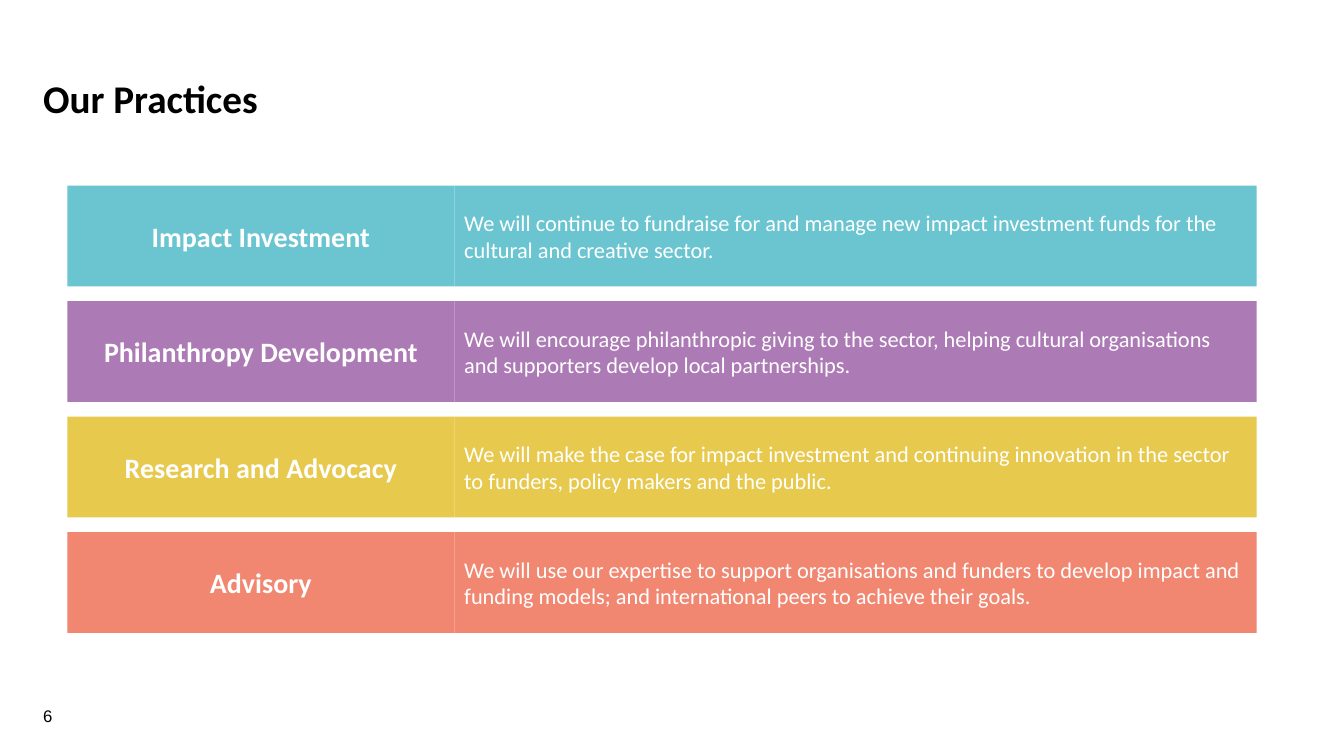
"""Build the "Our Practices" slide with four coloured practice bands."""
from dataclasses import dataclass

from pptx import Presentation
from pptx.dml.color import RGBColor
from pptx.enum.shapes import MSO_SHAPE
from pptx.enum.text import MSO_ANCHOR, PP_ALIGN
from pptx.shapes.autoshape import Shape
from pptx.slide import Slide
from pptx.util import Cm, Pt

RECTANGLE = MSO_SHAPE.RECTANGLE
MIDDLE = MSO_ANCHOR.MIDDLE
TOP = MSO_ANCHOR.TOP
LEFT = PP_ALIGN.LEFT
CENTER = PP_ALIGN.CENTER

BLACK = "000000"
WHITE = "FFFFFF"
MARGIN = 0.84
BAND_LEFT = 1.7
BAND_TOP = 4.68
BAND_HEIGHT = 2.54
BAND_PITCH = 2.91
NAME_WIDTH = 9.75
AIM_WIDTH = 20.22


@dataclass(frozen=True)
class Box:
    """Position and size in centimetres."""
    left: float
    top: float
    width: float
    height: float


@dataclass(frozen=True)
class Style:
    """Look of one piece of text."""
    size: int
    color: str
    bold: bool = False
    font: str = "Calibri"
    align: PP_ALIGN = LEFT
    anchor: MSO_ANCHOR = TOP
    line_spacing: float = 1.0


@dataclass(frozen=True)
class Practice:
    """One band: its name, its aim and its colour."""
    name: str
    aim: str
    color: str


TITLE_STYLE = Style(28, BLACK, bold=True, line_spacing=0.9)
NUMBER_STYLE = Style(12, BLACK, font="Arial")
NAME_STYLE = Style(20, WHITE, bold=True, align=CENTER, anchor=MIDDLE)
AIM_STYLE = Style(16, WHITE, anchor=MIDDLE)

PRACTICES = (
    Practice("Impact Investment",
             "We will continue to fundraise for and manage new impact investment "
             "funds for the cultural and creative sector.", "6BC5D1"),
    Practice("Philanthropy Development",
             "We will encourage philanthropic giving to the sector, helping cultural "
             "organisations and supporters develop local partnerships.", "AC7AB4"),
    Practice("Research and Advocacy",
             "We will make the case for impact investment and continuing innovation "
             "in the sector to funders, policy makers and the public.", "E7C94E"),
    Practice("Advisory",
             "We will use our expertise to support organisations and funders to "
             "develop impact and funding models; and international peers to achieve "
             "their goals.", "F18771"),
)


def rgb(value: str) -> RGBColor:
    """Turn a hex string into a colour."""
    return RGBColor.from_string(value)


def lengths(box: Box) -> tuple[Cm, Cm, Cm, Cm]:
    """Give the box as slide lengths."""
    return Cm(box.left), Cm(box.top), Cm(box.width), Cm(box.height)


def write(holder: Shape, text: str, style: Style) -> None:
    """Put one styled run into a shape."""
    frame = holder.text_frame
    frame.word_wrap = True
    frame.vertical_anchor = style.anchor
    paragraph = frame.paragraphs[0]
    paragraph.alignment = style.align
    paragraph.line_spacing = style.line_spacing
    run = paragraph.add_run()
    run.text = text
    run.font.name = style.font
    run.font.size = Pt(style.size)
    run.font.bold = style.bold
    run.font.color.rgb = rgb(style.color)


def add_label(slide: Slide, box: Box, text: str, style: Style) -> None:
    """Add text without a background."""
    write(slide.shapes.add_textbox(*lengths(box)), text, style)


def add_panel(slide: Slide, box: Box, fill: str, text: str, style: Style) -> None:
    """Add a filled rectangle with text."""
    panel = slide.shapes.add_shape(RECTANGLE, *lengths(box))
    panel.shadow.inherit = False
    panel.fill.solid()
    panel.fill.fore_color.rgb = rgb(fill)
    panel.line.fill.background()
    write(panel, text, style)


def add_practice(slide: Slide, practice: Practice, top: float) -> None:
    """Add the name and aim panels of one practice."""
    name_box = Box(BAND_LEFT, top, NAME_WIDTH, BAND_HEIGHT)
    aim_box = Box(BAND_LEFT + NAME_WIDTH, top, AIM_WIDTH, BAND_HEIGHT)
    add_panel(slide, name_box, practice.color, practice.name, NAME_STYLE)
    add_panel(slide, aim_box, practice.color, practice.aim, AIM_STYLE)


def main() -> None:
    """Build and save the presentation."""
    presentation = Presentation()
    presentation.slide_width = Cm(33.87)
    presentation.slide_height = Cm(19.05)
    slide = presentation.slides.add_slide(presentation.slide_layouts[6])
    add_label(slide, Box(MARGIN, 17.65, 1.47, 0.76), "6", NUMBER_STYLE)
    add_label(slide, Box(MARGIN, 1.88, 29.21, 1.37), "Our Practices", TITLE_STYLE)
    for row, practice in enumerate(PRACTICES):
        add_practice(slide, practice, BAND_TOP + row * BAND_PITCH)
    presentation.save("out.pptx")


if __name__ == "__main__":
    main()
